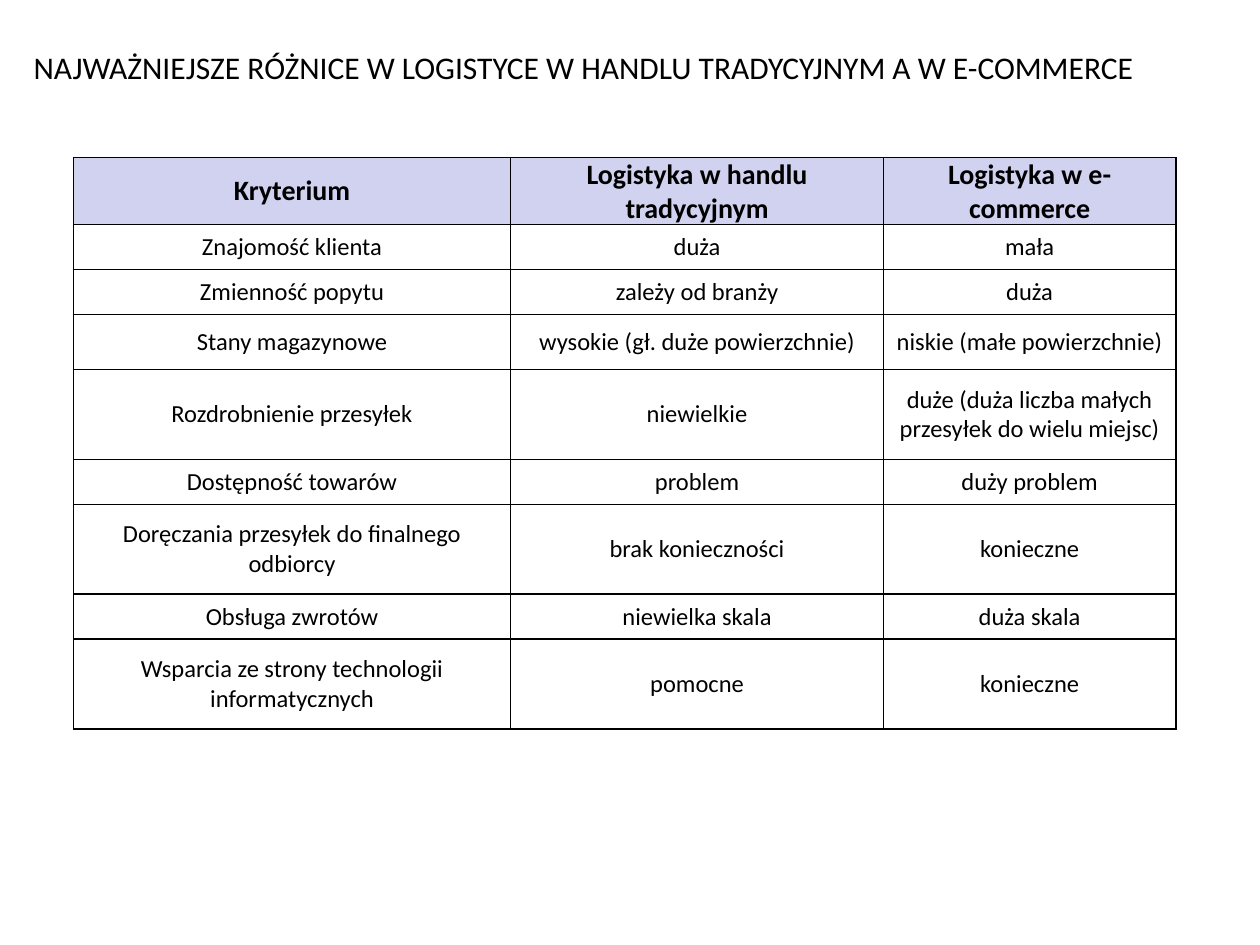
from lxml.etree import SubElement
from pptx import Presentation
from pptx.dml.color import RGBColor
from pptx.enum.text import MSO_ANCHOR, PP_ALIGN
from pptx.oxml.ns import qn
from pptx.util import Pt

COLORS = {"text": "000000", "border": "000000", "header": "D1D1F0"}
FONT = "Calibri"

TITLE = "NAJWAŻNIEJSZE RÓŻNICE W LOGISTYCE W HANDLU TRADYCYJNYM A W E-COMMERCE"
COLUMN_WIDTHS = [249.8, 213.1, 167]
HEADER_HEIGHT, SINGLE, MEDIUM, DOUBLE = 36, 25.7, 31.5, 51.3
HEADER = ("Kryterium", "Logistyka w handlu tradycyjnym", "Logistyka w e-commerce")
# Each criterion: row height, then the three cell texts
CRITERIA = [
    (SINGLE, "Znajomość klienta", "duża", "mała"),
    (SINGLE, "Zmienność popytu", "zależy od branży", "duża"),
    (MEDIUM, "Stany magazynowe", "wysokie (gł. duże powierzchnie)",
     "niskie (małe powierzchnie)"),
    (DOUBLE, "Rozdrobnienie przesyłek", "niewielkie",
     "duże (duża liczba małych przesyłek do wielu miejsc)"),
    (SINGLE, "Dostępność towarów", "problem", "duży problem"),
    (DOUBLE, "Doręczania przesyłek do finalnego odbiorcy", "brak konieczności",
     "konieczne"),
    (SINGLE, "Obsługa zwrotów", "niewielka skala", "duża skala"),
    (DOUBLE, "Wsparcia ze strony technologii informatycznych", "pomocne",
     "konieczne"),
]


def style_text(para, size, bold=False):
    for span in para.runs:
        span.font.name = FONT
        span.font.size = Pt(size)
        span.font.bold = bold
        span.font.color.rgb = RGBColor.from_string(COLORS["text"])


def add_borders(cell):
    properties = cell._tc.get_or_add_tcPr()
    for position, side in enumerate(("a:lnL", "a:lnR", "a:lnT", "a:lnB")):
        line = SubElement(properties, qn(side), w=str(Pt(1)))
        fill = SubElement(line, qn("a:solidFill"))
        SubElement(fill, qn("a:srgbClr"), val=COLORS["border"])
        properties.insert(position, line)  # borders come before the fill


def fill_cell(cell, text, is_header):
    cell.text_frame.text = text
    cell.vertical_anchor = MSO_ANCHOR.MIDDLE
    cell.margin_left = cell.margin_right = Pt(5)
    cell.margin_top = cell.margin_bottom = Pt(0)
    para = cell.text_frame.paragraphs[0]
    para.alignment = PP_ALIGN.CENTER
    style_text(para, 16 if is_header else 14, is_header)
    if is_header:
        cell.fill.solid()
        cell.fill.fore_color.rgb = RGBColor.from_string(COLORS["header"])
    else:
        cell.fill.background()
    add_borders(cell)


def add_title(page, left, top, width, height):
    box = page.shapes.add_textbox(Pt(left), Pt(top), Pt(width), Pt(height))
    box.text_frame.word_wrap = True
    box.text_frame.text = TITLE
    style_text(box.text_frame.paragraphs[0], 18)


def add_comparison_table(page, left, top):
    rows = [(HEADER_HEIGHT, *HEADER), *CRITERIA]
    width, height = sum(COLUMN_WIDTHS), sum(row[0] for row in rows)
    table = page.shapes.add_table(len(rows), len(COLUMN_WIDTHS), Pt(left), Pt(top),
                                  Pt(width), Pt(height)).table
    table.horz_banding = False
    for column, column_width in zip(table.columns, COLUMN_WIDTHS):
        column.width = Pt(column_width)
    for row_index, (row_height, *texts) in enumerate(rows):
        table.rows[row_index].height = Pt(row_height)
        for column_index, text in enumerate(texts):
            fill_cell(table.cell(row_index, column_index), text, row_index == 0)


def main():
    deck = Presentation()
    deck.slide_width, deck.slide_height = Pt(720), Pt(540)
    page = deck.slides.add_slide(deck.slide_layouts[6])
    add_title(page, 12.2, 24, 654, 116.6)
    add_comparison_table(page, 42, 90)
    deck.save("out.pptx")


if __name__ == "__main__":
    main()
